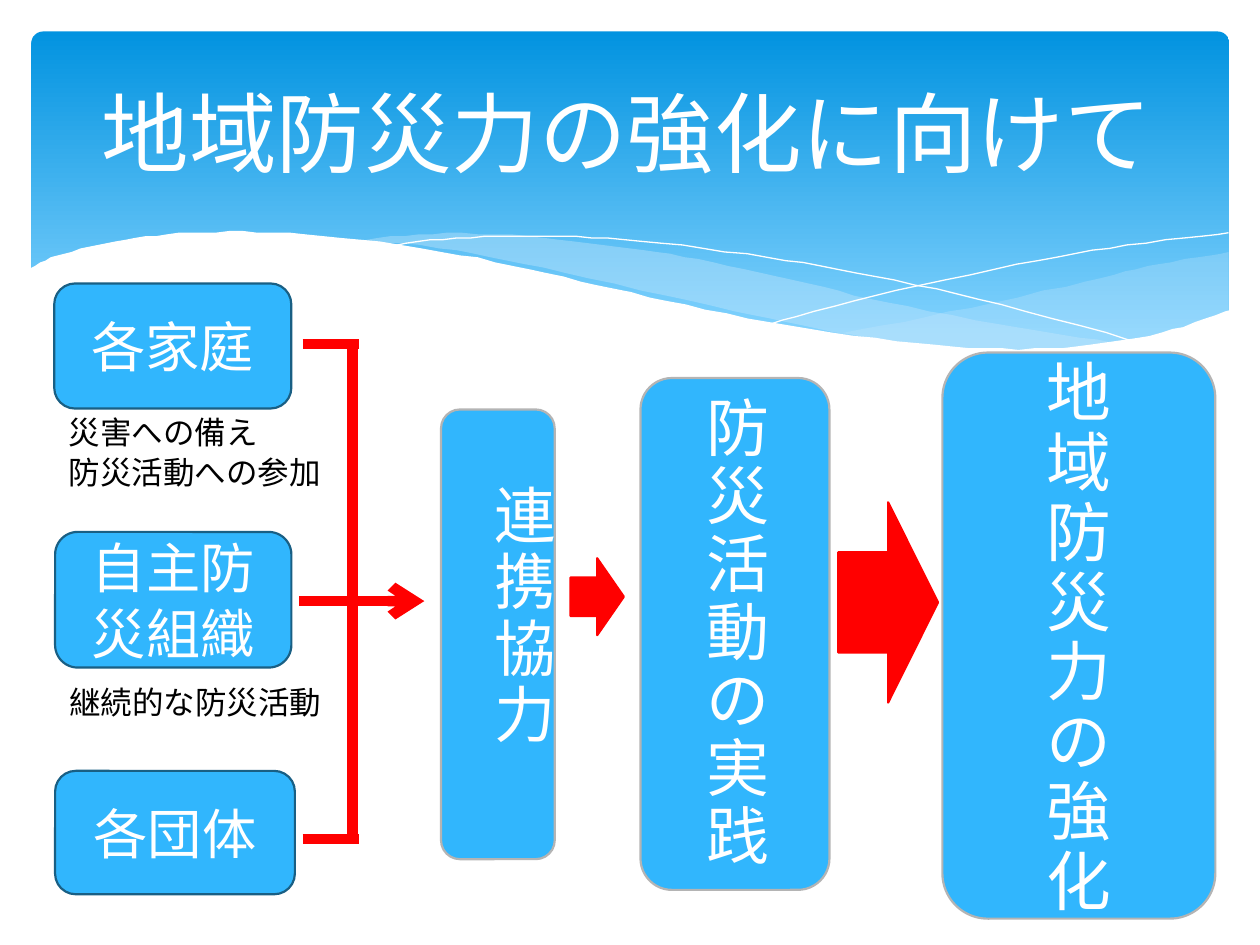
import pptx
import pptx.util
import pptx.dml.color
import pptx.enum.shapes
import pptx.enum.text
import pptx.oxml
import pptx.oxml.ns
from lxml import etree

Pt = pptx.util.Pt
RGB = pptx.dml.color.RGBColor
SHAPE = pptx.enum.shapes.MSO_SHAPE
ALIGN = pptx.enum.text.PP_ALIGN
MIDDLE = pptx.enum.text.MSO_ANCHOR.MIDDLE

WHITE = RGB(0xFF, 0xFF, 0xFF)
BLACK = RGB(0x00, 0x00, 0x00)
RED = RGB(0xFF, 0x00, 0x00)
SKY = RGB(0x31, 0xB6, 0xFD)
NAVY = RGB(0x19, 0x5F, 0x84)
GREY = RGB(0xB4, 0xB4, 0xB4)
BAND_TOP = RGB(0x02, 0x93, 0xE0)
BAND_BOTTOM = RGB(0x83, 0xD3, 0xFE)
MIST = RGB(0xC6, 0xE7, 0xFC)


def write(frame, text, size=18, color=WHITE, align=ALIGN.CENTER,
          inset=None, spacing=None, font="Calibri"):
    """Put one formatted paragraph into a text frame."""
    frame.word_wrap = True
    frame.vertical_anchor = MIDDLE
    if inset is not None:
        frame.margin_left = frame.margin_right = Pt(inset)
        frame.margin_top = frame.margin_bottom = Pt(inset)
    paragraph = frame.paragraphs[0]
    paragraph.alignment = align
    paragraph.line_spacing = spacing
    run = paragraph.add_run()
    run.text = text
    run.font.name = font
    run.font.size = Pt(size)
    run.font.color.rgb = color


def smooth(knots, steps=6):
    """Sample a Catmull-Rom curve through the knots."""
    ends = [knots[0], *knots, knots[-1]]
    curve = [knots[0]]
    for a, b, c, d in zip(ends, ends[1:], ends[2:], ends[3:]):
        for step in range(1, steps + 1):
            t = step / steps
            curve.append(tuple(
                0.5 * (2 * q + (r - p) * t + (2 * p - 5 * q + 4 * r - s) * t ** 2
                       + (3 * q - p - 3 * r + s) * t ** 3)
                for p, q, r, s in zip(a, b, c, d)))
    return curve


class Board:
    """The current slide and its drawing style."""

    def __init__(self, slide):
        self.slide = slide
        self.shapes = slide.shapes

    def paint(self, shape, fill=None, line=None, width=1.25, alpha=None):
        shape.shadow.inherit = False
        if fill is None:
            shape.fill.background()
        else:
            shape.fill.solid()
            shape.fill.fore_color.rgb = fill
        if alpha is not None:
            tint = shape.fill._xPr.find(".//" + pptx.oxml.ns.qn("a:srgbClr"))
            etree.SubElement(tint, pptx.oxml.ns.qn("a:alpha"), val=str(alpha * 1000))
        if line is None:
            shape.line.fill.background()
        else:
            shape.line.color.rgb = line
            shape.line.width = Pt(width)

    def block(self, box, kind=SHAPE.ROUNDED_RECTANGLE, text=None, fill=None,
              line=None, **text_format):
        shape = self.shapes.add_shape(kind, *map(Pt, box))
        self.paint(shape, fill, line)
        if text:
            write(shape.text_frame, text, **text_format)
        return shape

    def band(self, box):
        shape = self.block(box, fill=BAND_TOP)
        shape.adjustments[0] = 0.034
        shape.fill.gradient()
        shape.fill.gradient_angle = 270
        colors = ((0, BAND_TOP), (0.9, BAND_BOTTOM))
        for stop, (position, color) in zip(shape.fill.gradient_stops, colors):
            stop.position = position
            stop.color.rgb = color

    def wave(self, *edges, close=True, **paint):
        points = [point for edge in edges for point in smooth(edge)]
        builder = self.shapes.build_freeform(*points[0], scale=Pt(1))
        builder.add_line_segments(points[1:], close=close)
        self.paint(builder.convert_to_shape(), **paint)

    def title(self, text, box, **text_format):
        title = self.shapes.title
        title.left, title.top, title.width, title.height = map(Pt, box)
        write(title.text_frame, text, **text_format)
        # Bring the title in front of the banner
        self.shapes._spTree.append(title._element)

    def column_text(self, box, text, size):
        frame = self.shapes.add_textbox(*map(Pt, box)).text_frame
        write(frame, text, size=size, inset=18.5, spacing=0.9)

    def line(self, start, end, arrow=False):
        link = self.shapes.add_connector(
            pptx.enum.shapes.MSO_CONNECTOR.STRAIGHT, *map(Pt, (*start, *end)))
        link.line.color.rgb = RED
        link.line.width = Pt(6)
        if arrow:
            etree.SubElement(link.line._get_or_add_ln(),
                             pptx.oxml.ns.qn("a:tailEnd"), type="arrow")
        etree.SubElement(link._element.spPr, pptx.oxml.ns.qn("a:effectLst"))


def main():
    deck = pptx.Presentation()
    deck.slide_width, deck.slide_height = Pt(720), Pt(540)
    board = Board(deck.slides.add_slide(deck.slide_layouts[5]))

    # Banner with waves
    board.band((18, 18, 684.5, 194.5))
    board.wave([(702.5, 144), (662, 151), (620, 161), (542, 178.5), (476, 191)],
               [(476, 191), (518, 196.5), (562, 199.5), (615, 198.5),
                (652, 193.5), (683, 185), (702.5, 178)],
               fill=MIST, alpha=29)
    board.wave([(643, 196.5), (581, 187), (508, 173), (453, 160), (399, 148),
                (352, 141), (302, 135), (247, 133.5), (206, 137.5)],
               [(206, 137.5), (261, 143), (323, 156), (408, 175), (468, 188),
                (521, 196), (573, 200), (617, 199.5), (643, 196.5)],
               fill=MIST, alpha=40)
    for crest in (
            [(222.5, 140.5), (261, 136), (312, 135), (367, 138), (438, 147),
             (500, 158), (572, 174), (653, 196)],
            [(441, 185), (500, 169), (581, 151), (644, 140), (702, 133)]):
        board.wave(crest, close=False, line=WHITE, width=0)
    board.wave([(703.5, 177), (670, 188.5), (630, 196.5), (582.5, 199.5),
                (523, 196), (451, 186), (381, 172), (322, 158.5), (263, 145.5),
                (195, 135.5), (139, 132.5), (95, 134), (61, 139), (33, 146),
                (16.5, 153.5)],
               [(16.5, 237), (703.5, 237)], fill=WHITE)
    board.title("地域防災力の強化に向けて", (34.5, 26, 648, 98.5), size=50)

    # Stages
    stages = (
        ((252, 234, 65, 257), (268, 251, 33, 204.5), "連携協力", 35),
        ((366, 216, 108, 292.5), (385, 216.5, 69, 292.5), "防災活動の実践", 36),
        ((538.5, 201.5, 156, 323.5), (578, 206.5, 76.5, 318.5), "地域防災力の強化", 37),
    )
    for panel, text_box, text, size in stages:
        board.block(panel, fill=SKY, line=GREY)
        board.column_text(text_box, text, size)

    # Bracket joining the three groups
    top, middle, bottom = 196.5, 343.5, 479.5
    board.line((201.5, top), (201.5, bottom + 2))
    for y in (top, bottom):
        board.line((173, y), (205, y))
    board.line((171, middle), (242.5, middle), arrow=True)

    # Arrows between stages
    for box in ((326, 319, 30.5, 44), (479, 287, 57, 114.5)):
        board.block(box, SHAPE.RIGHT_ARROW, fill=RED, line=RED)

    # Groups
    for box, text in (((31, 162, 135.5, 71.5), "各家庭"),
                      ((31.5, 304, 135, 77.5), "自主防災組織"),
                      ((31.5, 440.5, 137, 70.5), "各団体")):
        board.block(box, text=text, fill=SKY, line=NAVY, size=31)

    # What each group does
    for top, height, text in ((235.5, 22.5, "災害への備え"),
                              (258.5, 22.5, "防災活動への参加"),
                              (386.5, 29.5, "継続的な防災活動")):
        board.block((31, top, 163.5, height), text=text,
                    color=BLACK, align=ALIGN.LEFT)

    deck.save("out.pptx")


if __name__ == "__main__":
    main()
